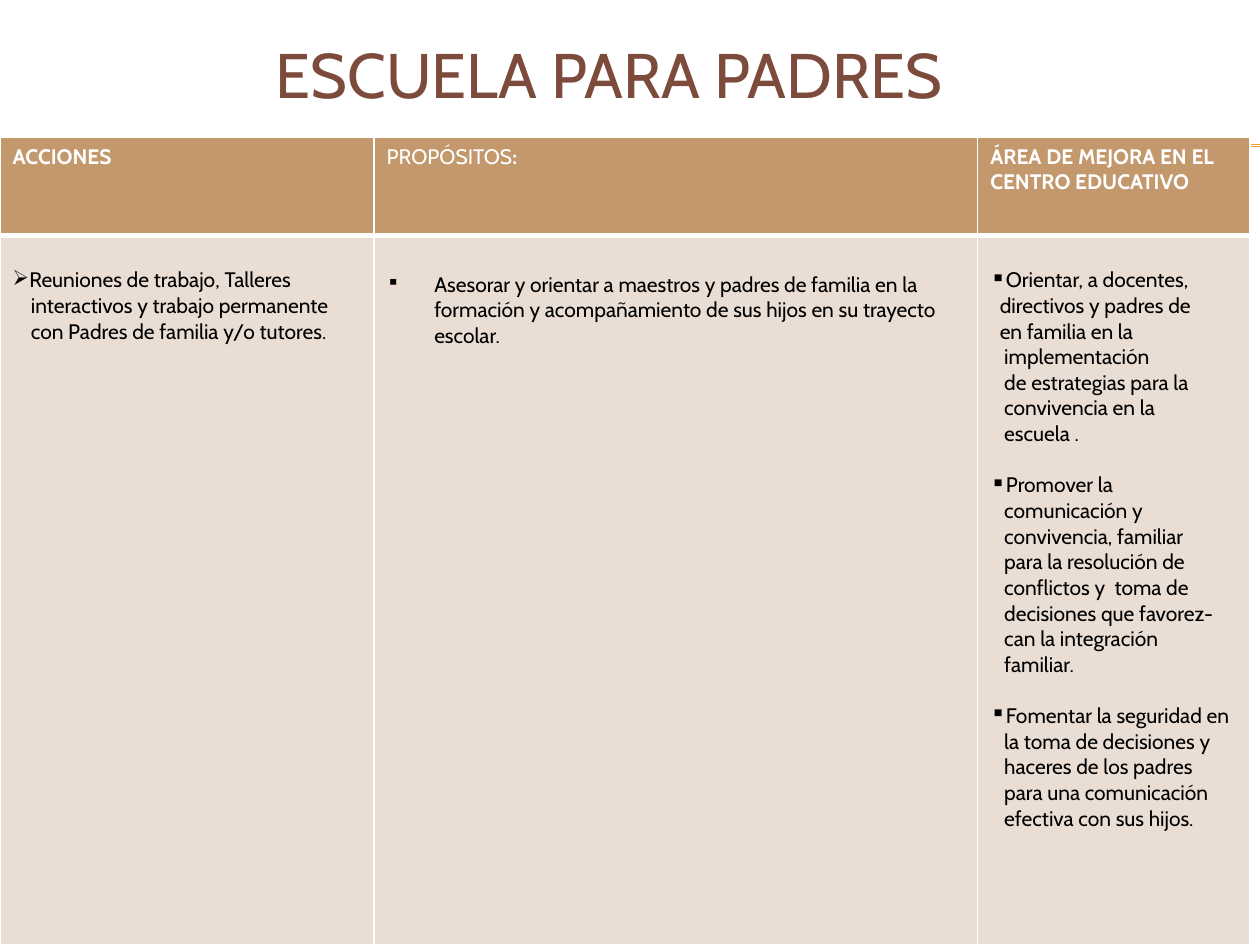
from dataclasses import dataclass

from lxml import etree
from pptx import Presentation
from pptx.dml.color import RGBColor
from pptx.enum.shapes import MSO_CONNECTOR
from pptx.enum.text import MSO_ANCHOR, PP_ALIGN
from pptx.oxml.ns import qn
from pptx.util import Cm, Pt

STRAIGHT = MSO_CONNECTOR.STRAIGHT
MIDDLE = MSO_ANCHOR.MIDDLE
CENTER = PP_ALIGN.CENTER


@dataclass(frozen=True)
class Theme:
    font: str = "Cabin"
    title: str = "7C4B3B"
    rule: str = "F0A22E"
    header: str = "C3986D"
    body: str = "E9DDD4"
    white: str = "FFFFFF"
    ink: str = "000000"
    title_size: float = 36
    text_size: float = 12
    thin: float = 1
    thick: float = 3


@dataclass(frozen=True)
class Span:
    text: str
    bold: bool = False


@dataclass(frozen=True)
class Line:
    text: str
    bullet: str = ""
    left: float = 0
    hanging: float = 0
    before: float = 0
    bullet_percent: int = 100


@dataclass(frozen=True)
class Column:
    width: float
    heading: tuple[Span, ...]
    top: float
    lines: tuple[Line, ...]


THEME = Theme()
SQUARE = "▪"
GROUP_GAP = 14.6


def item(bullet: str, first: str, rest: list[str], left: float, before: float = 0) -> tuple[Line, ...]:
    return (Line(first, bullet, before=before), *(Line(text, left=left) for text in rest))


COLUMNS = (
    Column(7.54, (Span("ACCIONES", True),), 0.64, item(
        "➢", "Reuniones de trabajo, Talleres",
        ["interactivos y trabajo permanente", "con Padres de familia y/o tutores."], 0.37)),
    Column(12.17, (Span("PROPÓSITOS"), Span(":", True)), 0.73, (
        Line("Asesorar y orientar a maestros y padres de familia en la formación "
             "y acompañamiento de sus hijos en su trayecto escolar.",
             SQUARE, left=0.96, hanging=0.96, bullet_percent=85),)),
    Column(5.49, (Span("ÁREA DE MEJORA EN EL CENTRO EDUCATIVO", True),), 0.64, (
        *item(SQUARE, "Orientar, a docentes,",
              ["directivos y padres de", "en familia en la"], 0.19),
        *(Line(text, left=0.28) for text in (
            "implementación", "de estrategias para la", "convivencia en la", "escuela .")),
        *item(SQUARE, "Promover la",
              ["comunicación y", "convivencia, familiar", "para la resolución de",
               "conflictos y  toma de", "decisiones que favorez-", "can la integración",
               "familiar."], 0.28, GROUP_GAP),
        *item(SQUARE, "Fomentar la seguridad en",
              ["la toma de decisiones y", "haceres de los padres",
               "para una comunicación", "efectiva con sus hijos."], 0.28, GROUP_GAP))),
)


def add_span(para, text: str, size: float, color: str, bold: bool = False) -> None:
    span = para.add_run()
    span.text = text
    span.font.name = THEME.font
    span.font.size = Pt(size)
    span.font.bold = bold
    span.font.color.rgb = RGBColor.from_string(color)


def add_rule(page, y: float) -> None:
    rule = page.shapes.add_connector(STRAIGHT, Cm(1.42), Cm(y), Cm(25.4), Cm(y))
    rule.line.color.rgb = RGBColor.from_string(THEME.rule)
    rule.line.width = Pt(0.75)
    etree.SubElement(rule._element.spPr, qn("a:effectLst"))


def add_title(page, text: str) -> None:
    box = page.shapes.add_textbox(Cm(0.99), Cm(0), Cm(22.86), Cm(2.97))
    frame = box.text_frame
    frame.word_wrap = True
    frame.vertical_anchor = MIDDLE
    para = frame.paragraphs[0]
    para.alignment = CENTER
    add_span(para, text, THEME.title_size, THEME.title)


def style_cell(cell, fill: str, top: float, bottom: float) -> None:
    properties = cell._tc.get_or_add_tcPr()
    widths = {"lnL": THEME.thin, "lnR": THEME.thin, "lnT": top, "lnB": bottom}
    for side, width in widths.items():
        border = etree.SubElement(properties, qn(f"a:{side}"), w=str(Pt(width)))
        solid = etree.SubElement(border, qn("a:solidFill"))
        etree.SubElement(solid, qn("a:srgbClr"), val=THEME.white)
    cell.fill.solid()
    cell.fill.fore_color.rgb = RGBColor.from_string(fill)


def format_line(para, line: Line) -> None:
    properties = para._p.get_or_add_pPr()
    properties.set("marL", str(Cm(line.left)))
    properties.set("indent", str(-Cm(line.hanging)))
    para.space_before = Pt(line.before)
    if line.bullet:
        etree.SubElement(properties, qn("a:buSzPct"), val=str(line.bullet_percent * 1000))
        etree.SubElement(properties, qn("a:buChar"), char=line.bullet)
    else:
        etree.SubElement(properties, qn("a:buNone"))


def fill_column(table, index: int, column: Column) -> None:
    table.columns[index].width = Cm(column.width)
    heading, body = table.cell(0, index), table.cell(1, index)
    style_cell(heading, THEME.header, THEME.thin, THEME.thick)
    for span in column.heading:
        add_span(heading.text_frame.paragraphs[0], span.text, THEME.text_size,
                 THEME.white, span.bold)
    style_cell(body, THEME.body, THEME.thick, THEME.thin)
    body.margin_top = Cm(column.top)
    frame = body.text_frame
    for number, line in enumerate(column.lines):
        para = frame.add_paragraph() if number else frame.paragraphs[0]
        format_line(para, line)
        add_span(para, line.text, THEME.text_size, THEME.ink)


def add_columns(page, columns: tuple[Column, ...]) -> None:
    heights = (1.98, 14.3)
    width = sum(column.width for column in columns)
    table = page.shapes.add_table(len(heights), len(columns), Cm(0), Cm(2.77),
                                  Cm(width), Cm(sum(heights))).table
    table.horz_banding = False
    for row, height in zip(table.rows, heights):
        row.height = Cm(height)
    for index, column in enumerate(columns):
        fill_column(table, index, column)


def main() -> None:
    deck = Presentation()
    deck.slide_width, deck.slide_height = Cm(25.4), Cm(19.05)
    page = deck.slides.add_slide(deck.slide_layouts[6])
    for y in (2.92, 2.95):
        add_rule(page, y)
    add_title(page, "ESCUELA PARA PADRES ")
    add_columns(page, COLUMNS)
    deck.save("out.pptx")


if __name__ == "__main__":
    main()
